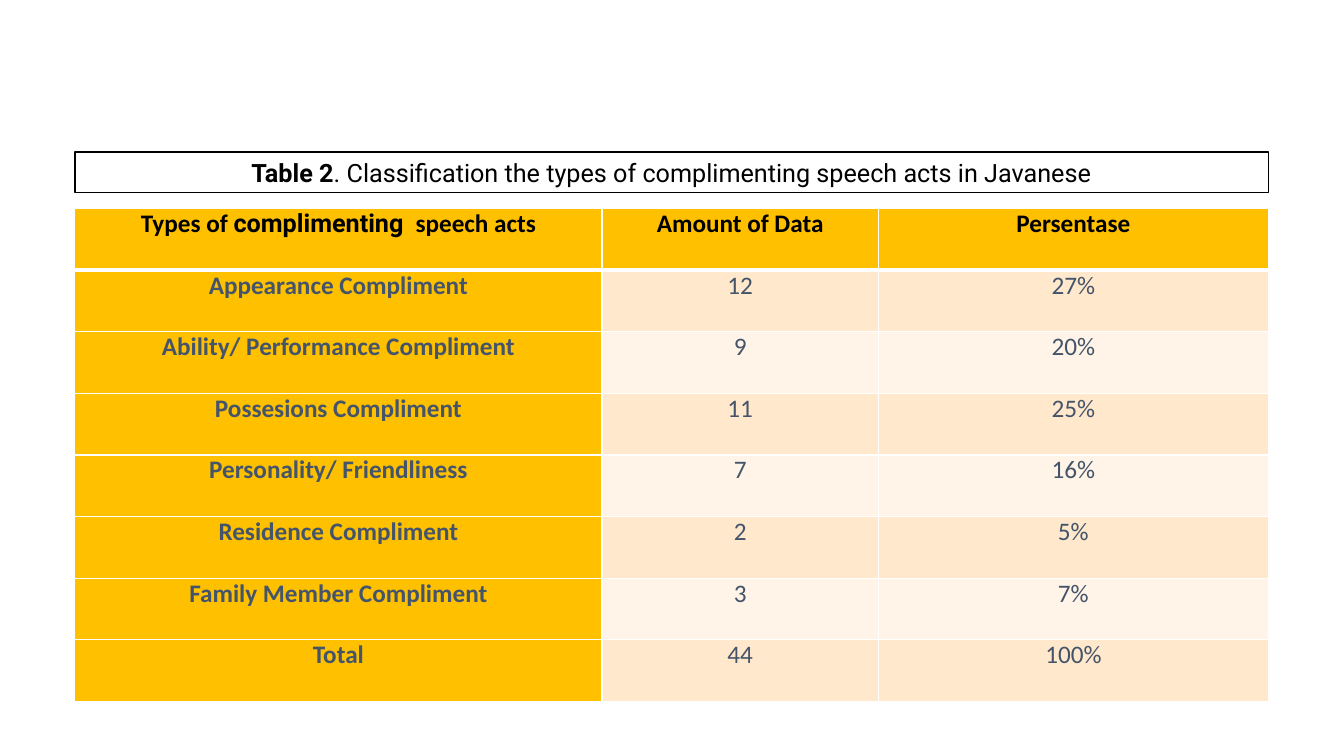
from pptx import Presentation
from pptx.dml.color import RGBColor
from pptx.enum.shapes import MSO_SHAPE
from pptx.enum.text import MSO_ANCHOR, PP_ALIGN
from pptx.oxml import parse_xml
from pptx.oxml.ns import nsdecls
from pptx.util import Pt

CAPTION = [
    ("Table 2", "Roboto", True),
    (". Classification the types of complimenting speech acts in Javanese", "Roboto", False),
]
HEADS = [
    [("Types of ", "Calibri", True), ("complimenting ", "Roboto", True),
     (" speech acts", "Calibri", True)],
    [("Amount of Data", "Calibri", True)],
    [("Persentase", "Calibri", True)],
]
ROWS = [
    ("Appearance Compliment", "12", "27%"),
    ("Ability/ Performance Compliment", "9", "20%"),
    ("Possesions Compliment", "11", "25%"),
    ("Personality/ Friendliness", "7", "16%"),
    ("Residence Compliment", "2", "5%"),
    ("Family Member Compliment", "3", "7%"),
    ("Total", "44", "100%"),
]
BLACK, WHITE, SLATE, GOLD = "000000", "FFFFFF", "44546A", "FFC000"
BANDS = ("FFE8CC", "FFF4E7")
WIDTHS = (376.5, 197.5, 278.5)
LEFT, WIDTH = 53.5, sum(WIDTHS)
CAP_TOP, CAP_HIGH = 108.7, 28.8
TOP, ROW_HIGH = 149, 44
INSETS = {"margin_left": Pt(5), "margin_right": Pt(5),
          "margin_top": 0, "margin_bottom": 0}


def color(code):
    return RGBColor.from_string(code)


def apply(target, values):
    """Set each named attribute of target."""
    for name, value in values.items():
        setattr(target, name, value)


def write(frame, runs, code):
    """Put centred runs of (text, font, bold) in the first paragraph."""
    para = frame.paragraphs[0]
    para.alignment = PP_ALIGN.CENTER
    for text, face, bold in runs:
        run = para.add_run()
        run.text = text
        apply(run.font, {"name": face, "bold": bold, "size": Pt(18)})
        run.font.color.rgb = color(code)


def edge(cell, low):
    """Draw white borders, with the bottom one low points wide."""
    props = cell._tc.get_or_add_tcPr()
    sides = (("L", 1), ("R", 1), ("T", 1), ("B", low))
    for place, (side, wide) in enumerate(sides):
        props.insert(place, parse_xml(
            f'<a:ln{side} {nsdecls("a")} w="{Pt(wide)}"><a:solidFill>'
            f'<a:srgbClr val="{WHITE}"/></a:solidFill></a:ln{side}>'))


def add_caption(slide):
    box = slide.shapes.add_shape(MSO_SHAPE.RECTANGLE, Pt(LEFT), Pt(CAP_TOP),
                                 Pt(WIDTH), Pt(CAP_HIGH))
    box.shadow.inherit = False
    box.fill.solid()
    box.fill.fore_color.rgb = color(WHITE)
    box.line.color.rgb = color(BLACK)
    box.line.width = Pt(1)
    apply(box.text_frame, {"word_wrap": True, "vertical_anchor": MSO_ANCHOR.MIDDLE})
    write(box.text_frame, CAPTION, BLACK)


def add_grid(slide):
    count = len(ROWS) + 1
    grid = slide.shapes.add_table(count, len(WIDTHS), Pt(LEFT), Pt(TOP),
                                  Pt(WIDTH), Pt(ROW_HIGH * count)).table
    for col, wide in zip(grid.columns, WIDTHS):
        col.width = Pt(wide)
    body = [[[(text, "Calibri", c == 0)] for c, text in enumerate(row)] for row in ROWS]
    for r, row in enumerate([HEADS] + body):
        grid.rows[r].height = Pt(ROW_HIGH)
        for c, runs in enumerate(row):
            cell = grid.cell(r, c)
            apply(cell, INSETS)
            cell.fill.solid()
            gold = r == 0 or c == 0
            cell.fill.fore_color.rgb = color(GOLD if gold else BANDS[(r - 1) % 2])
            edge(cell, 1 if r else 3)
            write(cell.text_frame, runs, SLATE if r else BLACK)


def main():
    deck = Presentation()
    apply(deck, {"slide_width": Pt(960), "slide_height": Pt(540)})
    slide = deck.slides.add_slide(deck.slide_layouts[6])
    add_grid(slide)
    add_caption(slide)
    deck.save("out.pptx")


if __name__ == "__main__":
    main()
